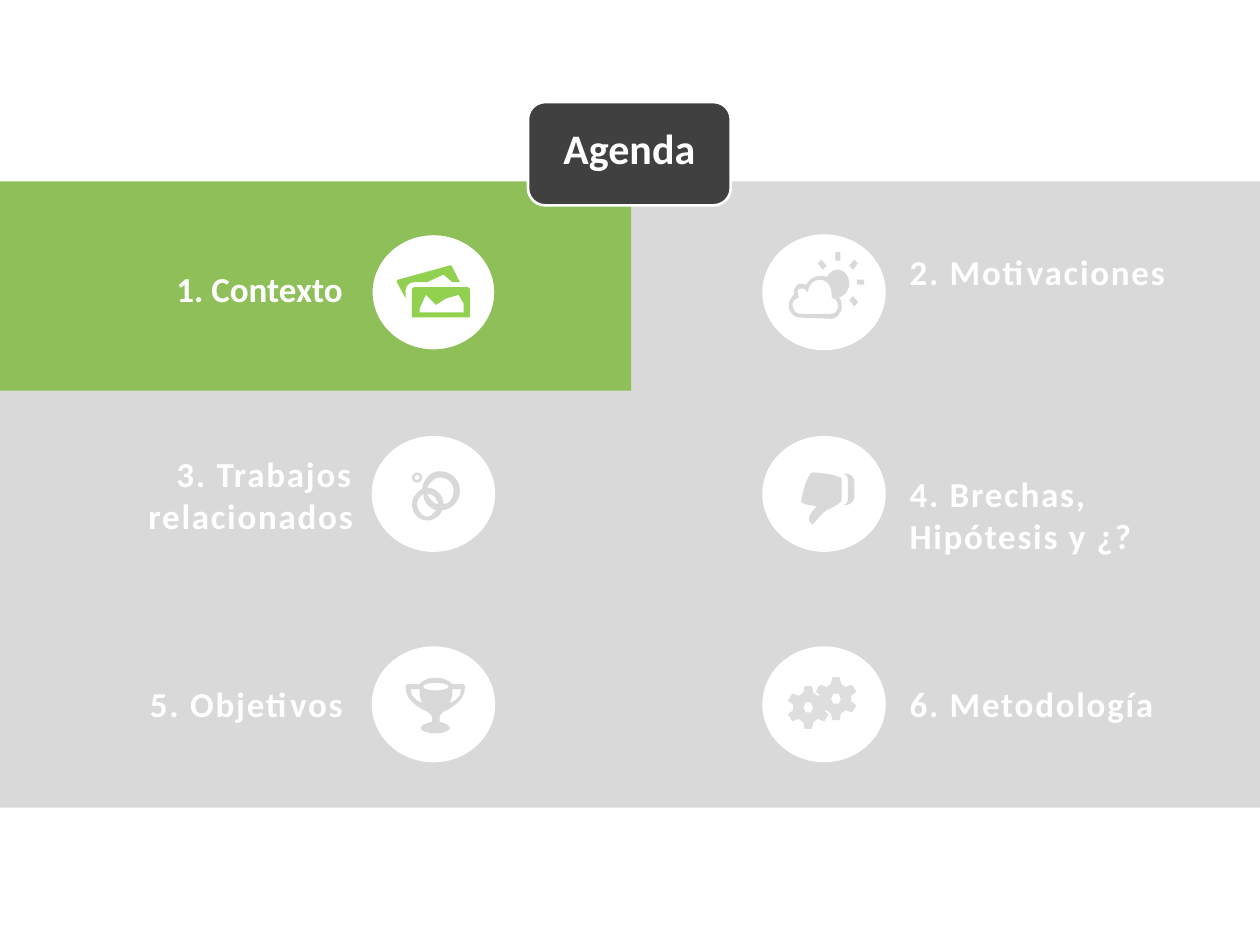
"""Build an agenda slide with six topics, the first one highlighted."""
import dataclasses
import math

import lxml.etree
import pptx
import pptx.dml.color
import pptx.enum.shapes
import pptx.enum.text
import pptx.oxml.ns
import pptx.shapes.autoshape
import pptx.slide
import pptx.util

Inches = pptx.util.Inches
Shape = pptx.enum.shapes.MSO_SHAPE
Align = pptx.enum.text.PP_ALIGN
Contour = list[tuple[float, ...]]
Box = tuple[float, float, float, float]


@dataclasses.dataclass(frozen=True)
class Theme:
    font: str = "Calibri"
    title_size: int = 24
    topic_size: int = 20
    white: str = "FFFFFF"
    muted: str = "D9D9D9"
    gear: str = "DEDEDE"
    active: str = "8FBF59"
    photo: str = "92D050"
    badge: str = "404040"


@dataclasses.dataclass(frozen=True)
class Topic:
    text: str
    label: Box
    active: bool = False


@dataclasses.dataclass(frozen=True)
class Icon:
    contours: list[Contour]
    color: str
    line_width: float = 0


THEME = Theme()
PANEL_TOP, PANEL_STEP, PANEL_WIDTH, PANEL_HEIGHT = 1.44, 1.655, 5.01, 1.66
CIRCLE_LEFTS, CIRCLE_TOPS = (2.95, 6.05), (1.86, 3.46, 5.13)
CIRCLE_WIDTH, CIRCLE_HEIGHT = 0.98, 0.92
CURVE_STEPS = 8

TOPICS = [
    Topic("1. Contexto", (1.21, 2.07, 1.61, 0.44), active=True),
    Topic("2. Motivaciones", (7.12, 1.94, 2.45, 0.44)),
    Topic("3. Trabajos relacionados", (0.28, 3.54, 2.62, 0.77)),
    Topic("4. Brechas, Hipótesis y ¿?", (7.12, 3.7, 2.61, 0.77)),
    Topic("5. Objetivos", (0.88, 5.37, 1.94, 0.44)),
    Topic("6. Metodología", (7.12, 5.37, 2.21, 0.44)),
]


def ellipse(x: float, y: float, rx: float, ry: float) -> Contour:
    angles = [math.tau * step / 32 for step in range(32)]
    return [(x + rx * math.cos(a), y + ry * math.sin(a)) for a in angles]


def shift(contour: Contour, dx: float, dy: float) -> Contour:
    return [(x + dx, y + dy) for x, y in contour]


def mirror(contour: Contour, x_axis: float | None = None, y_axis: float | None = None) -> Contour:
    return [(x if x_axis is None else 2 * x_axis - x,
             y if y_axis is None else 2 * y_axis - y) for x, y in contour]


def flatten(contour: Contour) -> list[tuple[float, float]]:
    points = [contour[0]]
    for part in contour[1:]:
        if len(part) == 2:
            points.append(part)
            continue
        x0, y0 = points[-1]
        x1, y1, x2, y2, x3, y3 = part
        for step in range(1, CURVE_STEPS + 1):
            t = step / CURVE_STEPS
            a, b, c, d = (1 - t) ** 3, 3 * t * (1 - t) ** 2, 3 * t * t * (1 - t), t ** 3
            points.append((a * x0 + b * x1 + c * x2 + d * x3, a * y0 + b * y1 + c * y2 + d * y3))
    return points


PHOTOS = [
    [(3.65, 2.24), (3.59, 2.12), (3.59, 2.11, 3.57, 2.1, 3.56, 2.11), (3.16, 2.22),
     (3.15, 2.22, 3.15, 2.23, 3.15, 2.24), (3.22, 2.37), (3.22, 2.3),
     (3.22, 2.27, 3.25, 2.24, 3.29, 2.24), (3.39, 2.24), (3.52, 2.18), (3.59, 2.24)],
    [(3.71, 2.28), (3.29, 2.28), (3.28, 2.28, 3.27, 2.29, 3.27, 2.3), (3.27, 2.51),
     (3.27, 2.52, 3.28, 2.52, 3.29, 2.52), (3.71, 2.52), (3.72, 2.52, 3.73, 2.52, 3.73, 2.51),
     (3.73, 2.3), (3.73, 2.29, 3.72, 2.28, 3.71, 2.28)],
    [(3.68, 2.48), (3.33, 2.48), (3.33, 2.45), (3.38, 2.34), (3.46, 2.42), (3.54, 2.37),
     (3.64, 2.34), (3.68, 2.41)],
]
RINGS = [
    [(3.49, 3.74), (3.42, 3.74, 3.36, 3.8, 3.35, 3.88), (3.31, 3.9, 3.27, 3.95, 3.27, 4),
     (3.27, 4.08, 3.33, 4.13, 3.39, 4.13), (3.44, 4.13, 3.49, 4.1, 3.51, 4.05),
     (3.59, 4.04, 3.65, 3.98, 3.65, 3.89), (3.65, 3.81, 3.58, 3.74, 3.49, 3.74)],
    [(3.39, 4.1), (3.35, 4.1, 3.31, 4.05, 3.31, 4), (3.31, 3.97, 3.33, 3.94, 3.36, 3.92),
     (3.36, 3.99, 3.41, 4.03, 3.46, 4.05), (3.45, 4.07, 3.42, 4.1, 3.39, 4.1)],
    [(3.39, 3.92), (3.44, 3.92, 3.47, 3.96, 3.48, 4), (3.44, 4, 3.41, 3.96, 3.39, 3.92)],
    [(3.52, 4), (3.52, 3.93, 3.46, 3.87, 3.39, 3.87), (3.41, 3.83, 3.45, 3.79, 3.49, 3.79),
     (3.55, 3.79, 3.6, 3.83, 3.6, 3.89), (3.6, 3.95, 3.57, 4, 3.52, 4)],
    ellipse(3.31, 3.79, 0.04, 0.04),
    ellipse(3.31, 3.79, 0.02, 0.02),
]
TROPHY_HANDLE = [(3.26, 5.47), (3.33, 5.47), (3.33, 5.52), (3.35, 5.58), (3.31, 5.56),
                 (3.27, 5.52)]
TROPHY = [
    [(3.49, 5.7), (3.49, 5.67, 3.51, 5.65, 3.56, 5.63), (3.62, 5.59, 3.69, 5.55, 3.69, 5.45),
     (3.69, 5.44, 3.68, 5.43, 3.67, 5.43), (3.59, 5.43), (3.57, 5.41, 3.53, 5.38, 3.46, 5.38),
     (3.38, 5.38, 3.35, 5.41, 3.33, 5.43), (3.24, 5.43), (3.23, 5.43, 3.22, 5.44, 3.22, 5.45),
     (3.22, 5.55, 3.29, 5.59, 3.35, 5.63), (3.4, 5.65, 3.43, 5.67, 3.43, 5.7), (3.43, 5.73),
     (3.37, 5.74, 3.34, 5.76, 3.34, 5.78), (3.34, 5.8, 3.39, 5.82, 3.46, 5.82),
     (3.52, 5.82, 3.57, 5.8, 3.57, 5.78), (3.57, 5.76, 3.54, 5.74, 3.49, 5.73)],
    ellipse(3.46, 5.45, 0.1, 0.03),
    TROPHY_HANDLE,
    mirror(TROPHY_HANDLE, x_axis=3.46),
]
THUMB = [
    [(6.48, 4.02), (6.48, 4.03, 6.38, 4.1, 6.44, 4.16), (6.45, 4.18, 6.5, 4.09, 6.56, 4.05),
     (6.59, 4.04, 6.68, 3.99, 6.68, 3.97), (6.68, 3.8), (6.68, 3.78, 6.54, 3.75, 6.45, 3.75),
     (6.41, 3.75, 6.36, 3.94, 6.36, 3.98), (6.36, 4.01, 6.47, 4.01, 6.48, 4.02)],
    [(6.7, 4.01), (6.72, 4.01, 6.78, 4, 6.78, 3.94), (6.78, 3.83),
     (6.78, 3.76, 6.72, 3.76, 6.7, 3.76), (6.69, 3.76, 6.73, 3.77, 6.73, 3.81), (6.73, 3.96),
     (6.73, 4, 6.69, 4.01, 6.7, 4.01)],
]
CLOUD = [
    [(6.74, 2.25), (6.74, 2.19, 6.7, 2.14, 6.65, 2.14), (6.61, 2.14, 6.58, 2.17, 6.56, 2.2),
     (6.55, 2.19, 6.53, 2.19, 6.51, 2.19), (6.46, 2.19, 6.42, 2.22, 6.4, 2.26),
     (6.39, 2.26, 6.37, 2.25, 6.36, 2.25), (6.33, 2.25, 6.3, 2.28, 6.3, 2.32), (6.3, 2.34),
     (6.28, 2.36, 6.26, 2.39, 6.26, 2.42), (6.26, 2.48, 6.3, 2.52, 6.35, 2.52), (6.6, 2.53),
     (6.62, 2.53, 6.65, 2.51, 6.66, 2.49), (6.68, 2.47, 6.68, 2.45, 6.68, 2.43),
     (6.68, 2.4, 6.67, 2.37, 6.66, 2.36), (6.7, 2.35, 6.74, 2.31, 6.74, 2.25)],
    [(6.6, 2.49), (6.35, 2.49), (6.32, 2.49, 6.29, 2.46, 6.29, 2.42),
     (6.29, 2.4, 6.3, 2.38, 6.32, 2.37), (6.34, 2.36), (6.33, 2.32),
     (6.33, 2.3, 6.34, 2.29, 6.36, 2.29), (6.38, 2.29), (6.41, 2.32), (6.42, 2.28),
     (6.44, 2.24, 6.47, 2.22, 6.51, 2.22), (6.56, 2.22, 6.6, 2.27, 6.6, 2.33), (6.6, 2.36),
     (6.62, 2.37), (6.64, 2.38, 6.65, 2.4, 6.65, 2.43), (6.65, 2.46, 6.63, 2.49, 6.6, 2.49)],
]
RAY = [(6.78, 2.06), (6.81, 2.09), (6.77, 2.14), (6.74, 2.11)]
RAYS = [RAY, mirror(RAY, y_axis=2.245), mirror(RAY, x_axis=6.65)]
STRAIGHT_RAYS = [(6.63, 2, 0.04, 0.07), (6.8, 2.22, 0.06, 0.04)]
GEAR = [
    [(6.75, 5.52), (6.79, 5.49), (6.76, 5.44), (6.71, 5.46), (6.67, 5.43), (6.66, 5.38),
     (6.61, 5.38), (6.6, 5.43), (6.56, 5.46), (6.51, 5.44), (6.48, 5.49), (6.52, 5.52),
     (6.52, 5.57), (6.48, 5.6), (6.51, 5.65), (6.56, 5.63), (6.6, 5.66), (6.61, 5.71),
     (6.66, 5.71), (6.67, 5.66), (6.71, 5.63), (6.76, 5.65), (6.79, 5.6), (6.75, 5.57)],
    [(6.66, 5.59), (6.61, 5.59), (6.59, 5.55), (6.61, 5.5), (6.66, 5.5), (6.68, 5.55)],
]
ICONS = [
    Icon(PHOTOS, THEME.photo), Icon(RINGS, THEME.muted), Icon(TROPHY, THEME.muted),
    Icon(THUMB, THEME.muted), Icon(CLOUD, THEME.muted),
    *(Icon([ray], THEME.muted) for ray in RAYS),
    Icon(GEAR, THEME.gear, 0.75),
    Icon([shift(contour, -0.22, 0.07) for contour in GEAR], THEME.gear, 0.75),
]


def paint(shape: pptx.shapes.autoshape.Shape, fill: str, line: str = "", width: float = 0) -> None:
    shape.shadow.inherit = False
    shape.fill.solid()
    shape.fill.fore_color.rgb = pptx.dml.color.RGBColor.from_string(fill)
    if width:
        shape.line.color.rgb = pptx.dml.color.RGBColor.from_string(line)
        shape.line.width = pptx.util.Pt(width)
    else:
        shape.line.fill.background()


def add_block(slide: pptx.slide.Slide, kind: Shape, box: Box, fill: str,
              line: str = "", width: float = 0) -> None:
    paint(slide.shapes.add_shape(kind, *map(Inches, box)), fill, line, width)


def add_icon(slide: pptx.slide.Slide, icon: Icon) -> None:
    outlines = [[(Inches(x), Inches(y)) for x, y in flatten(c)] for c in icon.contours]
    builder = slide.shapes.build_freeform(*outlines[0][0])
    for outline in outlines:
        if outline is not outlines[0]:
            builder.move_to(*outline[0])
        builder.add_line_segments(outline[1:], close=True)
    paint(builder.convert_to_shape(), icon.color, icon.color, icon.line_width)


def add_text(slide: pptx.slide.Slide, text: str, box: Box, *, size: int,
             align: Align, spacing: float = 0) -> None:
    frame = slide.shapes.add_textbox(*map(Inches, box)).text_frame
    frame.word_wrap = True
    frame.auto_size = pptx.enum.text.MSO_AUTO_SIZE.SHAPE_TO_FIT_TEXT
    paragraph = frame.paragraphs[0]
    paragraph.alignment = align
    run = paragraph.add_run()
    run.text = text
    run.font.name, run.font.size, run.font.bold = THEME.font, pptx.util.Pt(size), True
    run.font.color.rgb = pptx.dml.color.RGBColor.from_string(THEME.white)
    if spacing:
        run._r.get_or_add_rPr().set("spc", str(round(spacing * 100)))


def main() -> None:
    deck = pptx.Presentation()
    deck.slide_width, deck.slide_height = Inches(10), Inches(7.5)
    slide = deck.slides.add_slide(deck.slide_layouts[6])
    for index, topic in reversed(list(enumerate(TOPICS))):
        row, column = divmod(index, 2)
        panel = (5 * column, PANEL_TOP + PANEL_STEP * row, PANEL_WIDTH, PANEL_HEIGHT)
        add_block(slide, Shape.RECTANGLE, panel, THEME.active if topic.active else THEME.muted)
    for index, topic in enumerate(TOPICS):
        row, column = divmod(index, 2)
        circle = (CIRCLE_LEFTS[column], CIRCLE_TOPS[row], CIRCLE_WIDTH, CIRCLE_HEIGHT)
        add_block(slide, Shape.OVAL, circle, THEME.white, THEME.active, 1 if topic.active else 0)
        add_text(slide, topic.text, topic.label, size=THEME.topic_size,
                 align=Align.LEFT if column else Align.RIGHT, spacing=0 if topic.active else 1)
    add_block(slide, Shape.ROUNDED_RECTANGLE, (4.19, 0.81, 1.61, 0.82), THEME.badge,
              THEME.white, 1.5)
    add_text(slide, "Agenda", (4.19, 0.92, 1.61, 0.5), size=THEME.title_size, align=Align.CENTER)
    for icon in ICONS:
        add_icon(slide, icon)
    for ray in STRAIGHT_RAYS:
        add_block(slide, Shape.RECTANGLE, ray, THEME.muted)
    deck.save("out.pptx")


if __name__ == "__main__":
    main()
